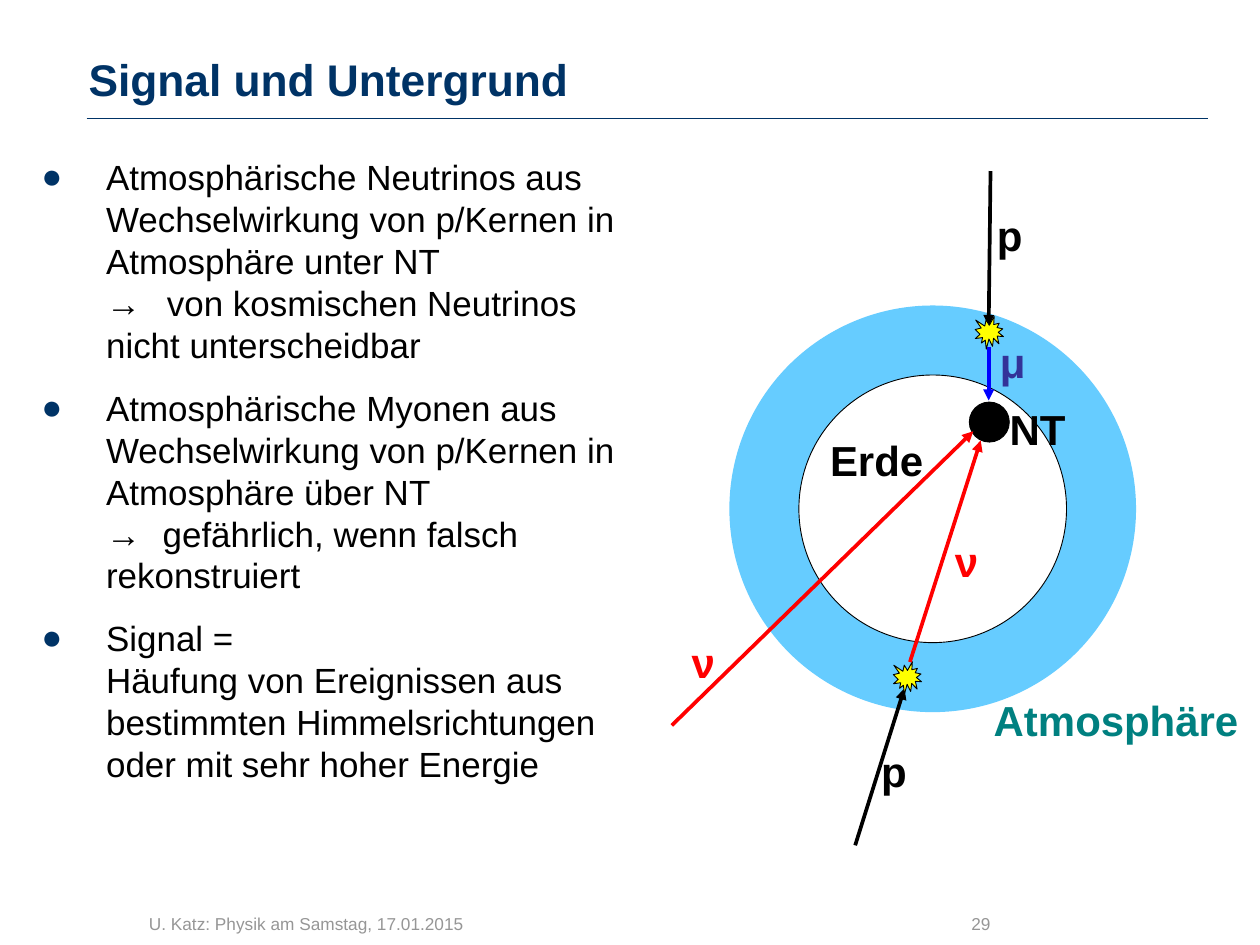
from lxml import etree
from pptx import Presentation
from pptx import util as u
from pptx.dml.color import RGBColor
from pptx.enum import shapes, text
from pptx.oxml import ns

Pt = u.Pt
NAVY = RGBColor(0x00, 0x33, 0x66)
BLACK = RGBColor(0x00, 0x00, 0x00)
WHITE = RGBColor(0xFF, 0xFF, 0xFF)
GREY = RGBColor(0x96, 0x96, 0x96)
SKY = RGBColor(0x66, 0xCC, 0xFF)
YELLOW = RGBColor(0xFF, 0xFF, 0x00)
RED = RGBColor(0xFF, 0x00, 0x00)
BLUE = RGBColor(0x00, 0x00, 0xFF)
VIOLET = RGBColor(0x33, 0x33, 0x99)
TEAL = RGBColor(0x00, 0x80, 0x80)

OVAL = shapes.MSO_SHAPE.OVAL
BURST = shapes.MSO_SHAPE.EXPLOSION1


def add_xml(parent, tag, **attributes):
    return etree.SubElement(parent, ns.qn(tag), attributes)


class SlideBuilder:
    font_name = "Arial"
    label_size = 34.1
    body_size = 28.4
    indent = 52.5

    def __init__(self, slide):
        self.slide = slide

    def style(self, paragraph, size, color, bold=False):
        font = paragraph.font
        font.name, font.size, font.bold = self.font_name, Pt(size), bold
        font.color.rgb = color

    def place(self, shape, left, top, width, height):
        shape.left, shape.top = Pt(left), Pt(top)
        shape.width, shape.height = Pt(width), Pt(height)

    def title(self, wording, *box):
        shape = self.slide.shapes.title
        self.place(shape, *box)
        frame = shape.text_frame
        frame.text = wording
        frame.auto_size = text.MSO_AUTO_SIZE.NONE
        frame.vertical_anchor = text.MSO_ANCHOR.TOP
        frame.margin_left = frame.margin_right = Pt(8)
        frame.margin_top = frame.margin_bottom = Pt(4)
        paragraph = frame.paragraphs[0]
        paragraph.alignment = text.PP_ALIGN.LEFT
        paragraph.line_spacing = Pt(39.8)
        self.style(paragraph, 36, NAVY, True)

    def bullets(self, items, *box):
        """Each item is a wording and the tab stop after its arrow."""
        shape = self.slide.placeholders[1]
        self.place(shape, *box)
        shape.fill.solid()
        shape.fill.fore_color.rgb = WHITE
        shape.line.color.rgb = WHITE
        shape.line.width = Pt(0.75)
        frame = shape.text_frame
        frame.auto_size = text.MSO_AUTO_SIZE.NONE
        frame.vertical_anchor = text.MSO_ANCHOR.TOP
        frame.text = "\n".join(wording for wording, _ in items)
        for paragraph, (_, tab) in zip(frame.paragraphs, items):
            properties = paragraph._p.get_or_add_pPr()
            properties.set("marL", str(Pt(self.indent)))
            properties.set("indent", str(-Pt(self.indent)))
            color = add_xml(properties, "a:buClr")
            add_xml(color, "a:srgbClr", val=str(NAVY))
            add_xml(properties, "a:buFont", typeface=self.font_name)
            add_xml(properties, "a:buChar", char="●")
            tabs = add_xml(properties, "a:tabLst")
            add_xml(tabs, "a:tab", pos=str(Pt(tab)), algn="l")
            paragraph.line_spacing = 1.0
            paragraph.space_before = Pt(0)
            paragraph.space_after = Pt(17)
            self.style(paragraph, self.body_size, BLACK)

    def shape(self, kind, center, width, height, fill, outlined=True):
        x, y = center
        shape = self.slide.shapes.add_shape(
            kind, Pt(x - width / 2), Pt(y - height / 2), Pt(width), Pt(height))
        shape.shadow.inherit = False
        shape.fill.solid()
        shape.fill.fore_color.rgb = fill
        if outlined:
            shape.line.color.rgb = BLACK
            shape.line.width = Pt(0.75)
        else:
            shape.line.fill.background()

    def line(self, start, end, color, width=3, arrow=True):
        connector = self.slide.shapes.add_connector(
            shapes.MSO_CONNECTOR.STRAIGHT, *map(Pt, start + end))
        connector.line.color.rgb = color
        connector.line.width = Pt(width)
        if arrow:
            add_xml(connector.line._get_or_add_ln(), "a:tailEnd", type="triangle")
        add_xml(connector._element.spPr, "a:effectLst")

    def label(self, wording, left, top, width, color):
        box = self.slide.shapes.add_textbox(Pt(left), Pt(top), Pt(width), Pt(49))
        frame = box.text_frame
        frame.word_wrap = False
        frame.auto_size = text.MSO_AUTO_SIZE.SHAPE_TO_FIT_TEXT
        frame.text = wording
        self.style(frame.paragraphs[0], self.label_size, color, True)

    def footer(self, wording, left, width, alignment, inset=0):
        box = self.slide.shapes.add_textbox(Pt(left), Pt(733.5), Pt(width), Pt(34.5))
        frame = box.text_frame
        frame.word_wrap = True
        frame.vertical_anchor = text.MSO_ANCHOR.MIDDLE
        frame.margin_left = Pt(inset)
        frame.margin_right = frame.margin_top = frame.margin_bottom = 0
        frame.text = wording
        frame.paragraphs[0].alignment = alignment
        self.style(frame.paragraphs[0], 14, GREY)


def main():
    presentation = Presentation()
    presentation.slide_width, presentation.slide_height = Pt(1024), Pt(768)
    slide = presentation.slides.add_slide(presentation.slide_layouts[1])
    builder = SlideBuilder(slide)

    # Title, rule and footer
    builder.line((70.5, 96.5), (981.5, 96.5), NAVY, 0.75, arrow=False)
    builder.footer("U. Katz: Physik am Samstag, 17.01.2015", 121, 651,
                   text.PP_ALIGN.LEFT)
    builder.footer("29", 770.5, 34.5, text.PP_ALIGN.RIGHT, 10)
    builder.title("Signal und Untergrund", 64, 42, 782, 78)

    # Bullet list
    builder.bullets([
        ("Atmosphärische Neutrinos aus Wechselwirkung von p/Kernen in "
         "Atmosphäre unter NT\v→\tvon kosmischen Neutrinos\v"
         "nicht unterscheidbar", 102),
        ("Atmosphärische Myonen aus Wechselwirkung von p/Kernen in "
         "Atmosphäre über NT\v→\tgefährlich, wenn falsch\vrekonstruiert", 98.5),
        ("Signal =\vHäufung von Ereignissen aus bestimmten "
         "Himmelsrichtungen oder mit sehr hoher Energie", 98.5),
    ], 26.5, 123, 515, 561)

    # Atmosphere, Earth and neutrino telescope
    earth = (758, 413.5)
    builder.shape(OVAL, earth, 330.5, 330.5, SKY, outlined=False)
    builder.shape(OVAL, earth, 217.5, 217.5, WHITE)
    builder.shape(OVAL, (804, 343), 32.5, 32.5, BLACK)

    # Particle tracks and interaction points
    builder.line((695, 687), (735, 559.5), BLACK)
    builder.shape(BURST, (737.5, 551), 23, 26.5, YELLOW)
    builder.line((739.5, 538), (797, 358), RED)
    builder.line((546, 589.5), (791, 350.5), RED)
    builder.line((805, 139), (803.5, 265), BLACK)
    builder.shape(BURST, (804, 270.5), 23, 26.5, YELLOW)
    builder.line((803.5, 282), (803.5, 325.5), BLUE)

    # Labels
    for label in [
        ("p", 709, 602.5, 35, BLACK),
        ("Atmosphäre", 800.5, 561, 216, TEAL),
        ("Erde", 667.5, 350, 91.5, BLACK),
        ("μ", 805.5, 270, 34.5, VIOLET),
        ("ν", 555, 514, 32.5, RED),
        ("p", 803, 167, 35, BLACK),
        ("ν", 769, 432, 32.5, RED),
        ("NT", 813.5, 324.5, 60.5, BLACK),
    ]:
        builder.label(*label)

    presentation.save("out.pptx")


if __name__ == "__main__":
    main()
